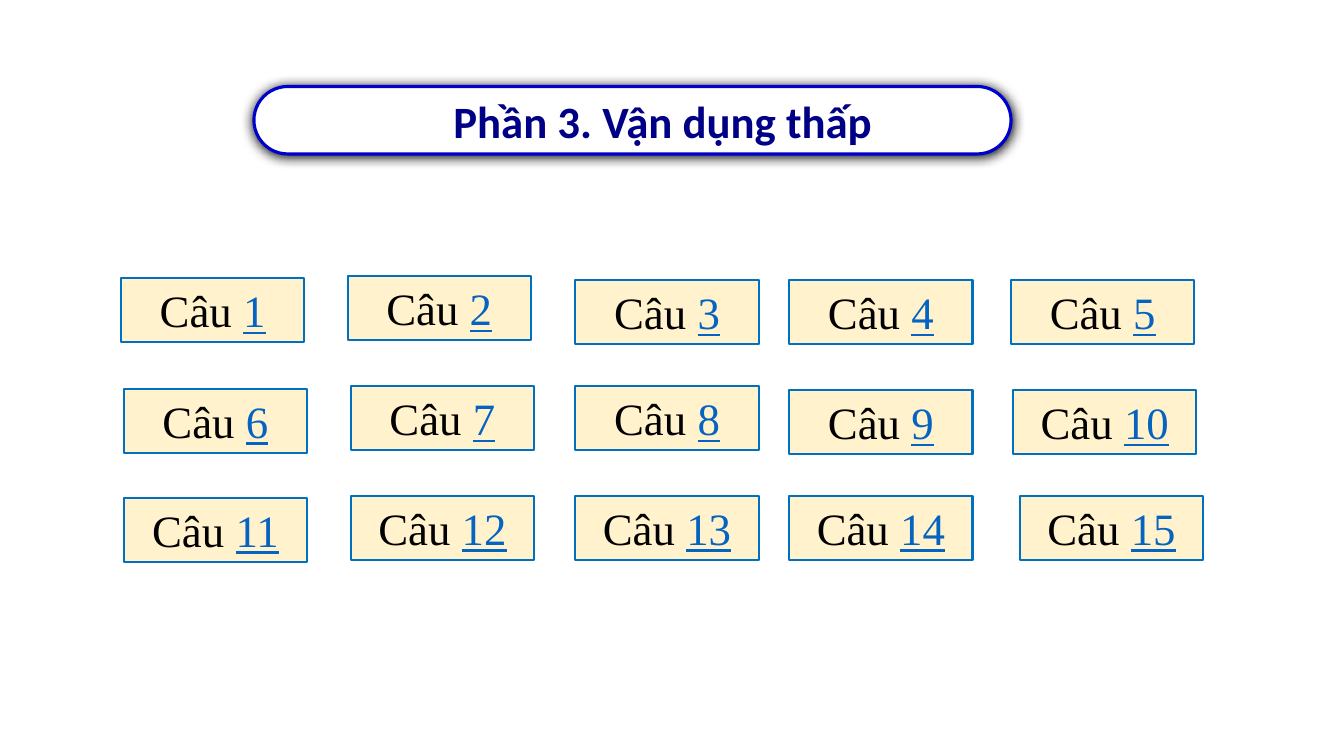
from lxml.etree import SubElement
from pptx import Presentation
from pptx.dml.color import RGBColor
from pptx.enum.shapes import MSO_SHAPE as SHAPE
from pptx.enum.text import MSO_ANCHOR as ANCHOR, MSO_AUTO_SIZE as AUTO, PP_ALIGN as ALIGN
from pptx.oxml.ns import qn
from pptx.util import Cm, Pt

TITLE_FONT = {"name": "Calibri", "size": Pt(32), "bold": True}
LABEL_FONT = {"name": "Times New Roman", "size": Pt(32)}
NUMBER_FONT = {**LABEL_FONT, "underline": True}
BUTTON_FRAME = {"word_wrap": True, "vertical_anchor": ANCHOR.TOP,
                "auto_size": AUTO.SHAPE_TO_FIT_TEXT}
TITLE_FRAME = {"word_wrap": True, "vertical_anchor": ANCHOR.MIDDLE,
               "margin_left": Cm(1.78)}
BUTTON_ROWS = [
    [(3.05, 7.01), (8.76, 6.96), (14.5, 7.06), (19.89, 7.06), (25.48, 7.06)],
    [(3.12, 9.8), (8.84, 9.73), (14.5, 9.73), (19.89, 9.83), (25.53, 9.83)],
    [(3.12, 12.55), (8.84, 12.5), (14.5, 12.5), (19.89, 12.5), (25.7, 12.5)],
]


def color(value):
    return RGBColor.from_string(value)


def apply(target, values):
    for name, value in values.items():
        setattr(target, name, value)


def add_box(s, kind, box, fill, line, width, frame):
    sp = s.shapes.add_shape(kind, *map(Cm, box))
    sp.shadow.inherit = False
    sp.fill.solid()
    sp.fill.fore_color.rgb = color(fill)
    sp.line.color.rgb = color(line)
    sp.line.width = Pt(width)
    apply(sp.text_frame, frame)
    sp.text_frame.paragraphs[0].alignment = ALIGN.CENTER
    return sp


def add_run(sp, text, font, value):
    r = sp.text_frame.paragraphs[0].add_run()
    r.text = text
    apply(r.font, font)
    r.font.color.rgb = color(value)


def add_shadow(sp, value, blur, dist, angle):
    effects = sp._element.spPr.find(qn("a:effectLst"))
    shadow = SubElement(effects, qn("a:outerShdw"), blurRad=str(Pt(blur)),
                        dist=str(Pt(dist)), dir=str(angle * 60000),
                        algn="ctr", rotWithShape="0")
    SubElement(shadow, qn("a:srgbClr"), val=value)


def add_title(s, text):
    sp = add_box(s, SHAPE.ROUNDED_RECTANGLE, (6.4, 2.18, 19.08, 1.7),
                 "FFFFFF", "0000CC", 2.25, TITLE_FRAME)
    sp.adjustments[0] = 0.5
    add_shadow(sp, "000000", 8.5, 1, 90)
    add_run(sp, text, TITLE_FONT, "000086")


def add_button(s, number, left, top):
    sp = add_box(s, SHAPE.RECTANGLE, (left, top, 4.62, 1.62),
                 "FFF2CC", "0070C0", 1.5, BUTTON_FRAME)
    add_run(sp, "Câu ", LABEL_FONT, "000000")
    add_run(sp, str(number), NUMBER_FONT, "0563C1")


def main():
    prs = Presentation()
    prs.slide_width, prs.slide_height = Cm(33.87), Cm(19.05)
    s = prs.slides.add_slide(prs.slide_layouts[6])
    add_title(s, "Phần 3. Vận dụng thấp")
    places = [place for row in BUTTON_ROWS for place in row]
    for number, (left, top) in enumerate(places, 1):
        add_button(s, number, left, top)
    prs.save("out.pptx")


if __name__ == "__main__":
    main()
